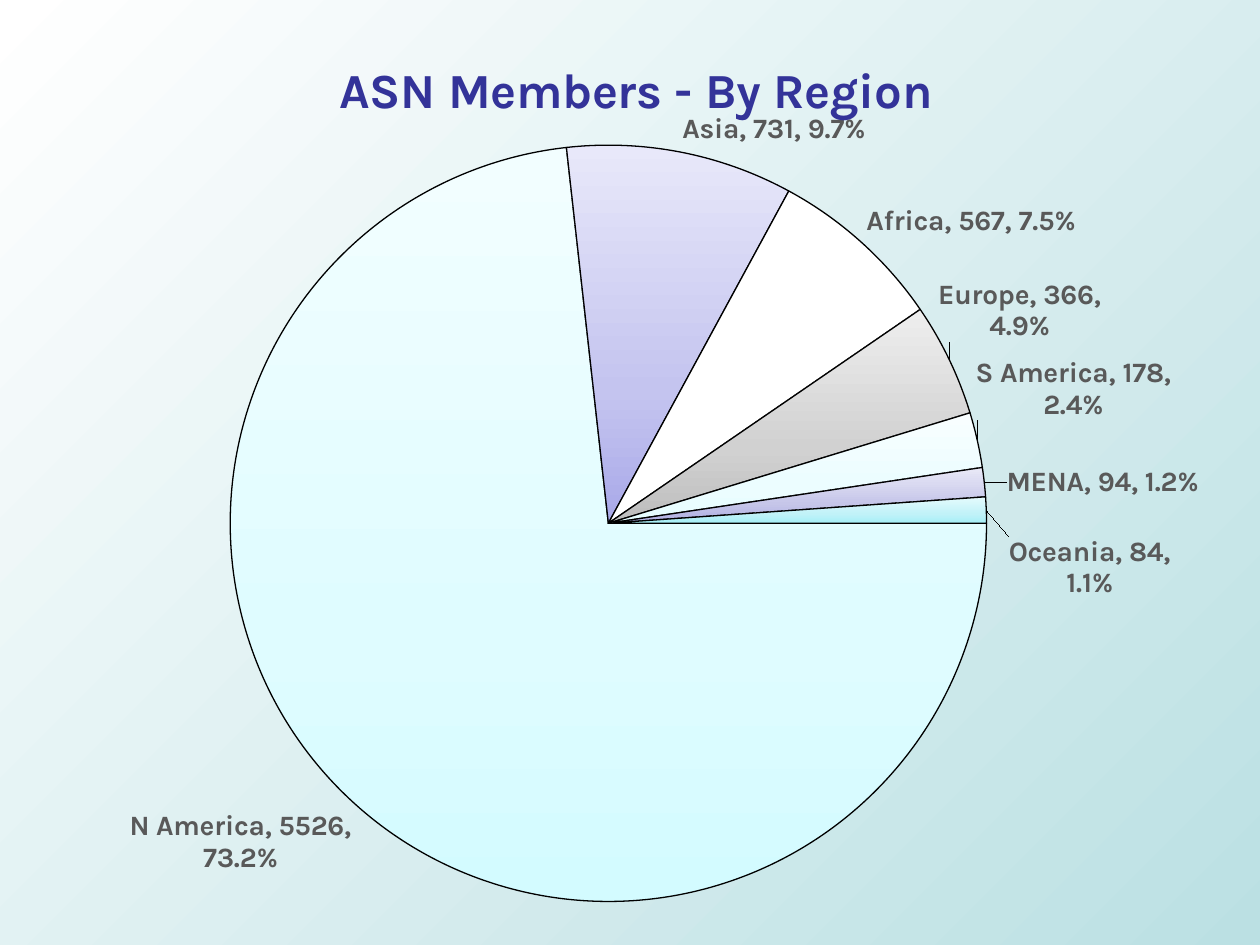
from copy import deepcopy
from dataclasses import dataclass

from lxml.etree import Element, SubElement
from pptx import Presentation
from pptx.chart.data import CategoryChartData
from pptx.dml.color import RGBColor
from pptx.enum.chart import XL_CHART_TYPE, XL_LABEL_POSITION
from pptx.oxml.ns import qn
from pptx.util import Pt

PX = 9144  # one hundred px to the inch


@dataclass(frozen=True)
class Theme:
    title_font: str = "Karla"
    body_font: str = "Cambria"
    title_size: int = 28
    label_size: int = 16
    body_size: int = 10
    title_color: str = "333399"
    label_color: str = "595959"
    ink: str = "000000"
    background: tuple = ("FFFFFF", "BBE0E3")


THEME = Theme()
SLICE_STOPS = (0, 35, 100)

# region, members, fill colours from bottom to top, label shift in px
REGIONS = [
    ("N America", 5526, ("D3FBFF", "DFFCFF", "F2FEFF"), None),
    ("Asia", 731, ("A9A9E9", "C4C4EF", "E8E8FA"), None),
    ("Africa", 567, ("FFFFFF",), None),
    ("Europe", 366, ("BDBDBD", "D1D1D1", "EEEEEE"), (-14, -11)),
    ("S America", 178, ("E6FDFF", "ECFDFF", "F8FEFF"), (-7, -14)),
    ("MENA", 94, ("ADADE1", "C6C6E9", "E9E9F7"), (12, 13)),
    ("Oceania", 84, ("A6EFF7", "C1F2F8", "E6FBFD"), (12, 46)),
]


def format_font(font, *, name, size, color, bold=False):
    font.name = name
    font.size = Pt(size)
    font.bold = bold
    font.color.rgb = RGBColor.from_string(color)


def paint_gradient(fill, colors, positions, angle):
    """Fill with a linear gradient; the angle runs counter-clockwise."""
    fill.gradient()
    fill.gradient_angle = angle
    first = fill.gradient_stops[0]._gs
    for _ in range(len(colors) - 2):
        first.addnext(deepcopy(first))
    for stop, color, position in zip(fill.gradient_stops, colors, positions):
        stop.color.rgb = RGBColor.from_string(color)
        stop.position = position / 100


def set_layout(parent, index, **values):
    """Give a chart part a manual layout, as its child at the index."""
    for old in parent.findall(qn("c:layout")):
        parent.remove(old)
    layout = Element(qn("c:layout"))
    parent.insert(index, layout)
    manual = SubElement(layout, qn("c:manualLayout"))
    for tag, value in values.items():
        SubElement(manual, qn(f"c:{tag}")).set("val", str(value))


def add_title(chart, text):
    title = chart.chart_title
    span = title.text_frame.paragraphs[0].add_run()
    span.text = text
    format_font(span.font, name=THEME.title_font, size=THEME.title_size,
                color=THEME.title_color, bold=True)
    title.include_in_layout = False
    set_layout(title._element, 1, xMode="edge", yMode="edge", x=0.25, y=0.03)


def paint_slices(series):
    for index, (_, _, colors, _) in enumerate(REGIONS):
        look = series.points[index].format
        if len(colors) == 1:
            look.fill.solid()
            look.fill.fore_color.rgb = RGBColor.from_string(colors[0])
        else:
            paint_gradient(look.fill, colors, SLICE_STOPS, 90)
        look.line.color.rgb = RGBColor.from_string(THEME.ink)
        look.line.width = Pt(0.75)


def add_labels(series, width, height):
    labels = series.data_labels
    labels.show_category_name = True
    labels.show_value = True
    labels.show_percentage = True
    labels.number_format = "0.0%"
    labels.number_format_is_linked = False
    labels.position = XL_LABEL_POSITION.OUTSIDE_END
    format_font(labels.font, name=THEME.title_font, size=THEME.label_size,
                color=THEME.label_color, bold=True)

    root = labels._element
    for old in root.findall(qn("c:showLeaderLines")):
        root.remove(old)
    SubElement(root, qn("c:separator")).text = ", "
    shared = list(root)
    SubElement(root, qn("c:showLeaderLines")).set("val", "1")

    shifts = [(index, region[3]) for index, region in enumerate(REGIONS) if region[3]]
    for place, (index, (shift_x, shift_y)) in enumerate(shifts):
        label = Element(qn("c:dLbl"))
        root.insert(place, label)
        SubElement(label, qn("c:idx")).set("val", str(index))
        label.extend([deepcopy(part) for part in shared])
        set_layout(label, 1, x=round(shift_x / width, 4), y=round(shift_y / height, 4))


def add_member_pie(page, left, top, width, height):
    data = CategoryChartData()
    data.categories = [region[0] for region in REGIONS]
    data.add_series("Series 1", [region[1] for region in REGIONS])
    box = [length * PX for length in (left, top, width, height)]
    chart = page.shapes.add_chart(XL_CHART_TYPE.PIE, *box, data).chart
    chart.has_legend = False
    format_font(chart.font, name=THEME.body_font, size=THEME.body_size, color=THEME.ink)
    add_title(chart, "ASN Members - By Region")

    plot = chart.plots[0]
    plot.vary_by_categories = True
    pie = plot._element
    for old in pie.findall(qn("c:firstSliceAng")):
        pie.remove(old)
    SubElement(pie, qn("c:firstSliceAng")).set("val", "90")
    set_layout(pie.getparent(), 0, layoutTarget="inner", xMode="edge", yMode="edge",
               x=0.166, y=0.134, w=0.632, h=0.819)

    series = plot.series[0]
    paint_slices(series)
    add_labels(series, width, height)


def main():
    deck = Presentation()
    deck.slide_width, deck.slide_height = 1000 * PX, 750 * PX
    page = deck.slides.add_slide(deck.slide_layouts[6])
    paint_gradient(page.background.fill, THEME.background, (0, 100), 315)
    add_member_pie(page, 25, 17, 950, 733)
    deck.save("out.pptx")


if __name__ == "__main__":
    main()
